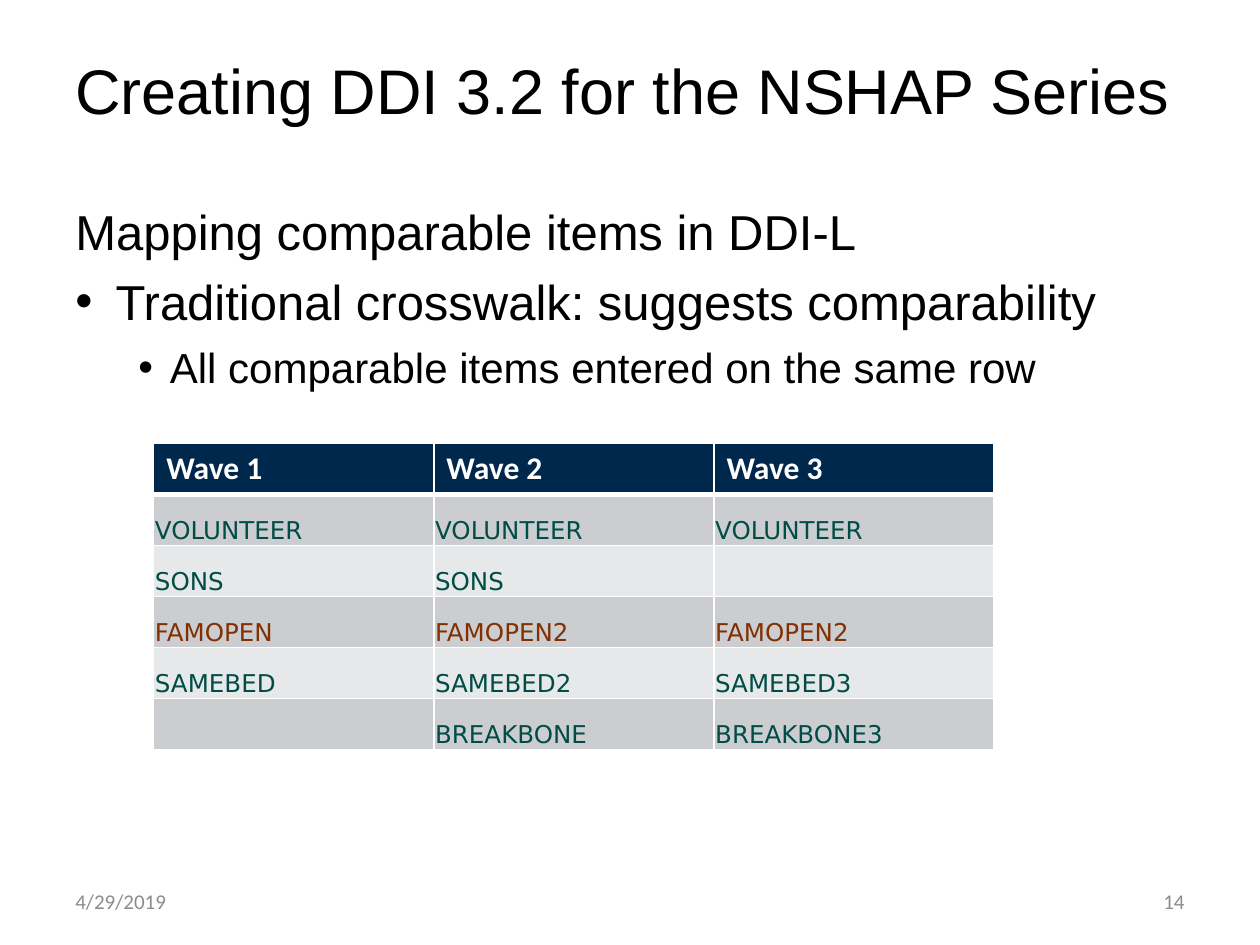
"""Build the slide on mapping comparable NSHAP items across waves."""

import dataclasses
import typing

import lxml.etree
import pptx
import pptx.dml.color
import pptx.enum.text
import pptx.oxml.ns
import pptx.util

Inches = pptx.util.Inches
Pt = pptx.util.Pt
Anchor = pptx.enum.text.MSO_ANCHOR
Align = pptx.enum.text.PP_ALIGN
qn = pptx.oxml.ns.qn


@dataclasses.dataclass(frozen=True)
class Theme:
    text: str = "000000"
    footer: str = "8C8C8C"
    white: str = "FFFFFF"
    header: str = "00274C"
    bands: tuple[str, str] = ("CCCDD0", "E7E8E9")
    item: str = "004C46"
    highlight: str = "813001"
    main_font: str = "Arial"
    table_font: str = "Calibri"
    item_font: str = "DejaVu Sans"
    title_size: float = 36
    body_size: float = 28
    detail_size: float = 24
    header_size: float = 18
    item_size: float = 14
    footer_size: float = 12


THEME = Theme()


@dataclasses.dataclass(frozen=True)
class Line:
    text: str
    size: float
    font: str = THEME.main_font
    color: str = THEME.text
    bold: bool = False
    align: Align = Align.LEFT
    space_before: float = 0
    margin: float = 0
    hanging: float = 0


@dataclasses.dataclass(frozen=True)
class TextBox:
    left: float
    top: float
    width: float
    height: float
    lines: tuple[Line, ...]
    anchor: Anchor = Anchor.MIDDLE


@dataclasses.dataclass(frozen=True)
class WaveRow:
    items: tuple[str, str, str]
    color: str = THEME.item


TEXT_BOXES = (
    TextBox(0.5, 0.33, 9, 0.76,
            (Line("Creating DDI 3.2 for the NSHAP Series", THEME.title_size),)),
    TextBox(0.5, 1.55, 9, 4.95, (
        Line("Mapping comparable items in DDI-L", THEME.body_size),
        Line("Traditional crosswalk: suggests comparability", THEME.body_size,
             space_before=6.4, margin=0.32, hanging=0.32),
        Line("All comparable items entered on the same row", THEME.detail_size,
             space_before=6.4, margin=0.75, hanging=0.25),
    ), Anchor.TOP),
    TextBox(0.5, 6.95, 2.33, 0.4,
            (Line("4/29/2019", THEME.footer_size, THEME.table_font, THEME.footer),)),
    TextBox(7.17, 6.95, 2.33, 0.4,
            (Line("14", THEME.footer_size, THEME.table_font, THEME.footer,
                  align=Align.RIGHT),)),
)

WAVES = ("Wave 1", "Wave 2", "Wave 3")
WAVE_ROWS = (
    WaveRow(("VOLUNTEER", "VOLUNTEER", "VOLUNTEER")),
    WaveRow(("SONS", "SONS", "")),
    WaveRow(("FAMOPEN", "FAMOPEN2", "FAMOPEN2"), THEME.highlight),
    WaveRow(("SAMEBED", "SAMEBED2", "SAMEBED3")),
    WaveRow(("", "BREAKBONE", "BREAKBONE3")),
)


def rgb(color: str) -> pptx.dml.color.RGBColor:
    return pptx.dml.color.RGBColor.from_string(color)


def write_line(paragraph: typing.Any, line: Line) -> None:
    paragraph.text = line.text
    paragraph.alignment = line.align
    paragraph.space_before = Pt(line.space_before)
    if line.hanging:
        properties = paragraph._p.get_or_add_pPr()
        properties.set("marL", str(Inches(line.margin)))
        properties.set("indent", str(-Inches(line.hanging)))
        lxml.etree.SubElement(properties, qn("a:buFont"), typeface=line.font)
        lxml.etree.SubElement(properties, qn("a:buChar"), char="•")
    paragraph.font.name = line.font
    paragraph.font.size = Pt(line.size)
    paragraph.font.bold = line.bold
    paragraph.font.color.rgb = rgb(line.color)


def draw_text_box(slide: typing.Any, box: TextBox) -> None:
    shape = slide.shapes.add_textbox(
        Inches(box.left), Inches(box.top), Inches(box.width), Inches(box.height))
    frame = shape.text_frame
    frame.word_wrap = True
    frame.vertical_anchor = box.anchor
    for index, line in enumerate(box.lines):
        paragraph = frame.add_paragraph() if index else frame.paragraphs[0]
        write_line(paragraph, line)


def style_cell(cell: typing.Any, fill: str, top: float, bottom: float) -> None:
    properties = cell._tc.get_or_add_tcPr()
    for side, width in (("L", 1), ("R", 1), ("T", top), ("B", bottom)):
        border = lxml.etree.SubElement(properties, qn(f"a:ln{side}"), w=str(Pt(width)))
        solid = lxml.etree.SubElement(border, qn("a:solidFill"))
        lxml.etree.SubElement(solid, qn("a:srgbClr"), val=THEME.white)
    cell.fill.solid()
    cell.fill.fore_color.rgb = rgb(fill)


def draw_crosswalk(slide: typing.Any) -> None:
    table = slide.shapes.add_table(
        len(WAVE_ROWS) + 1, len(WAVES),
        Inches(1.22), Inches(3.52), Inches(6.67), Inches(2.43)).table
    for column, wave in enumerate(WAVES):
        cell = table.cell(0, column)
        style_cell(cell, THEME.header, 1, 3)
        write_line(cell.text_frame.paragraphs[0],
                   Line(wave, THEME.header_size, THEME.table_font, THEME.white, True))
    for index, row in enumerate(WAVE_ROWS):
        for column, item in enumerate(row.items):
            cell = table.cell(index + 1, column)
            style_cell(cell, THEME.bands[index % 2], 1 if index else 3, 1)
            cell.vertical_anchor = Anchor.BOTTOM
            cell.margin_left = cell.margin_right = cell.margin_top = Inches(0.01)
            cell.margin_bottom = 0
            write_line(cell.text_frame.paragraphs[0],
                       Line(item, THEME.item_size, THEME.item_font, row.color))


def main() -> None:
    presentation = pptx.Presentation()
    presentation.slide_width = Inches(10)
    presentation.slide_height = Inches(7.5)
    slide = presentation.slides.add_slide(presentation.slide_layouts[6])
    for box in TEXT_BOXES:
        draw_text_box(slide, box)
    draw_crosswalk(slide)
    presentation.save("out.pptx")


if __name__ == "__main__":
    main()
